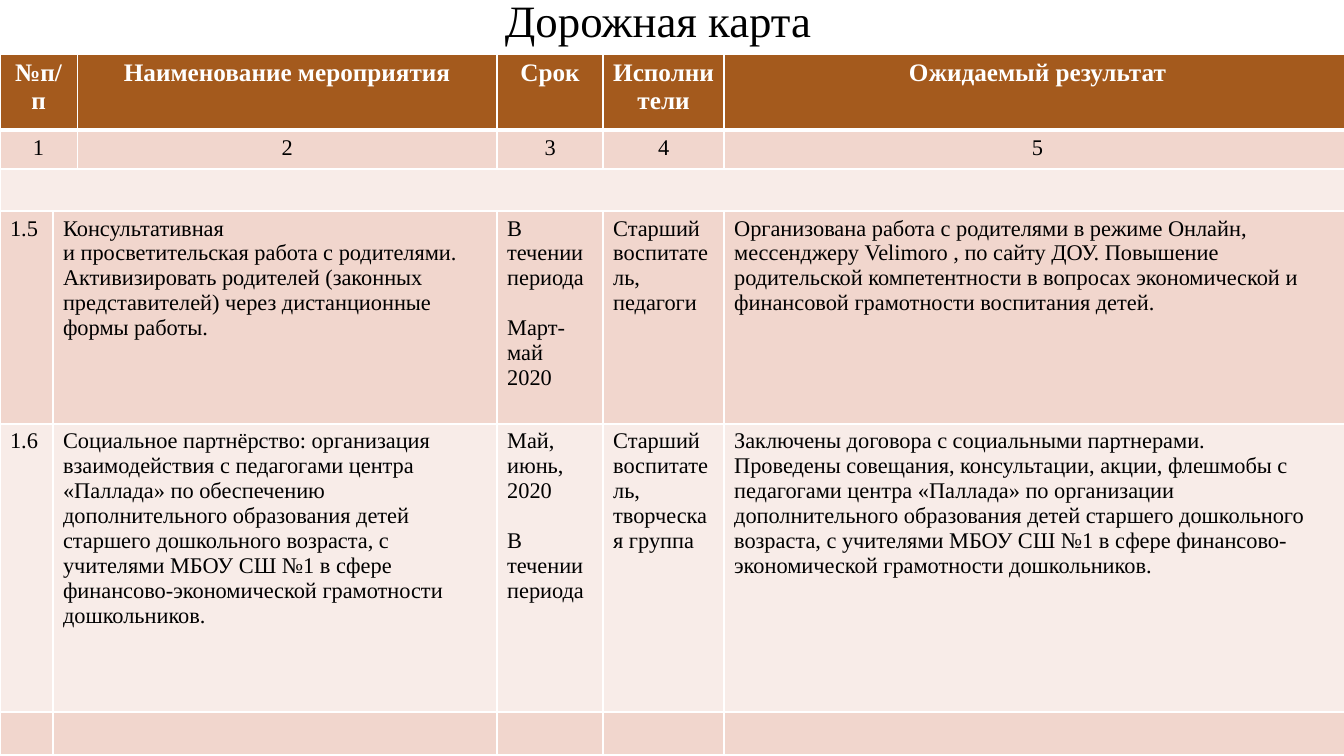
from dataclasses import dataclass
from typing import Any

from lxml import etree
from pptx import Presentation
from pptx.dml.color import RGBColor
from pptx.enum.text import MSO_AUTO_SIZE, PP_ALIGN
from pptx.oxml.ns import qn
from pptx.util import Emu, Pt

CENTER, LEFT = PP_ALIGN.CENTER, PP_ALIGN.LEFT
FIT_SHAPE = MSO_AUTO_SIZE.SHAPE_TO_FIT_TEXT
EMU_PER_PIXEL = 914400 / 100.8
SLIDE_WIDTH, SLIDE_HEIGHT = 1344, 756
TABLE_TOP = 54
COLUMN_WIDTHS = (53, 16, 420, 106, 121, 627)
BLANK_LAYOUT = 6


@dataclass(frozen=True)
class Theme:
    font: str = "Times New Roman"
    text: str = "000000"
    white: str = "FFFFFF"
    header: str = "A45A1D"
    band_dark: str = "F1D6CD"
    band_light: str = "F8ECE8"
    title_size: int = 32
    header_size: int = 18
    body_size: int = 16
    thin_border: int = 1
    thick_border: int = 3


THEME = Theme()


@dataclass(frozen=True)
class TextStyle:
    size: int
    color: str
    bold: bool = False
    alignment: Any = LEFT


TITLE = TextStyle(THEME.title_size, THEME.text)
HEADER = TextStyle(THEME.header_size, THEME.white, True, CENTER)
NUMBER = TextStyle(THEME.body_size, THEME.text, alignment=CENTER)
BODY = TextStyle(THEME.body_size, THEME.text)


@dataclass(frozen=True)
class Line:
    text: str
    gap: int = 0


@dataclass(frozen=True)
class TableRow:
    """One row; spans count the grid columns that each entry covers."""
    height: int
    fill: str
    style: TextStyle
    spans: tuple[int, ...]
    entries: tuple[tuple[Line, ...], ...] = ()
    top: int = THEME.thin_border
    bottom: int = THEME.thin_border


HEADING_SPANS = (2, 1, 1, 1, 1)
ACTIVITY_SPANS = (1, 2, 1, 1, 1)

ROWS = (
    TableRow(76, THEME.header, HEADER, HEADING_SPANS, (
        (Line("№п/п"),),
        (Line("Наименование мероприятия"),),
        (Line("Срок"),),
        (Line("Исполнители"),),
        (Line("Ожидаемый результат"),),
    ), bottom=THEME.thick_border),
    TableRow(39, THEME.band_dark, NUMBER, HEADING_SPANS,
             tuple((Line(str(number)),) for number in range(1, 6)),
             top=THEME.thick_border),
    TableRow(42, THEME.band_light, BODY, (6,)),
    TableRow(213, THEME.band_dark, BODY, ACTIVITY_SPANS, (
        (Line("1.5"),),
        (Line("Консультативная"),
         Line("и просветительская работа с родителями."),
         Line("Активизировать родителей (законных представителей) через "
              "дистанционные формы работы.")),
        (Line("В течении периода"), Line("Март-май 2020", THEME.header_size)),
        (Line("Старший воспитатель, педагоги"),),
        (Line("Организована работа с родителями в режиме Онлайн, мессенджеру "
              "Velimoro , по сайту ДОУ. Повышение родительской компетентности "
              "в вопросах экономической и финансовой грамотности воспитания "
              "детей."),),
    )),
    TableRow(288, THEME.band_light, BODY, ACTIVITY_SPANS, (
        (Line("1.6"),),
        (Line("Социальное партнёрство: организация взаимодействия с педагогами "
              "центра «Паллада» по обеспечению дополнительного образования "
              "детей старшего дошкольного возраста, с учителями МБОУ СШ №1 в "
              "сфере финансово-экономической грамотности дошкольников."),),
        (Line("Май, июнь,"), Line("2020"),
         Line("В течении периода", THEME.header_size)),
        (Line("Старший воспитатель, творческая группа"),),
        (Line("Заключены договора с социальными партнерами."),
         Line("Проведены совещания, консультации, акции, флешмобы с педагогами "
              "центра «Паллада» по организации дополнительного образования "
              "детей старшего дошкольного возраста, с учителями МБОУ СШ №1 в "
              "сфере финансово-экономической грамотности дошкольников.")),
    )),
    TableRow(43, THEME.band_dark, BODY, ACTIVITY_SPANS),
)


def px(length: int) -> Emu:
    return Emu(round(length * EMU_PER_PIXEL))


def write_lines(text_frame: Any, lines: tuple[Line, ...], style: TextStyle) -> None:
    font_values = {"name": THEME.font, "size": Pt(style.size), "bold": style.bold}
    for index, line in enumerate(lines):
        paragraph = text_frame.paragraphs[0] if index == 0 else text_frame.add_paragraph()
        paragraph.alignment = style.alignment
        if line.gap:
            paragraph.space_before = Pt(line.gap)
        run = paragraph.add_run()
        run.text = line.text
        for name, value in font_values.items():
            setattr(run.font, name, value)
        run.font.color.rgb = RGBColor.from_string(style.color)


def format_cell(cell: Any, row: TableRow) -> None:
    """Draw the cell's four borders and its fill."""
    properties = cell._tc.get_or_add_tcPr()
    widths = {"a:lnL": THEME.thin_border, "a:lnR": THEME.thin_border,
              "a:lnT": row.top, "a:lnB": row.bottom}
    for tag, width in widths.items():
        border = etree.SubElement(properties, qn(tag), w=str(Pt(width)))
        fill = etree.SubElement(border, qn("a:solidFill"))
        etree.SubElement(fill, qn("a:srgbClr"), val=THEME.white)
    cell.fill.solid()
    cell.fill.fore_color.rgb = RGBColor.from_string(row.fill)


def add_title(slide: Any) -> None:
    title = slide.shapes.add_textbox(px(495), px(-12), px(330), px(65))
    title.text_frame.word_wrap = False
    title.text_frame.auto_size = FIT_SHAPE
    write_lines(title.text_frame, (Line("Дорожная карта"),), TITLE)


def add_roadmap(slide: Any) -> None:
    table = slide.shapes.add_table(
        len(ROWS), len(COLUMN_WIDTHS), px(0), px(TABLE_TOP),
        px(sum(COLUMN_WIDTHS)), px(sum(row.height for row in ROWS))).table
    table.horz_banding = False
    for column, width in zip(table.columns, COLUMN_WIDTHS):
        column.width = px(width)
    for row_index, row in enumerate(ROWS):
        table.rows[row_index].height = px(row.height)
        for cell in table.rows[row_index].cells:
            format_cell(cell, row)
        column_index = 0
        for entry_index, span in enumerate(row.spans):
            cell = table.cell(row_index, column_index)
            if span > 1:
                cell.merge(table.cell(row_index, column_index + span - 1))
            if row.entries:
                write_lines(cell.text_frame, row.entries[entry_index], row.style)
            column_index += span


def main() -> None:
    presentation = Presentation()
    presentation.slide_width = px(SLIDE_WIDTH)
    presentation.slide_height = px(SLIDE_HEIGHT)
    slide = presentation.slides.add_slide(presentation.slide_layouts[BLANK_LAYOUT])
    add_roadmap(slide)
    add_title(slide)
    presentation.save("out.pptx")


if __name__ == "__main__":
    main()
